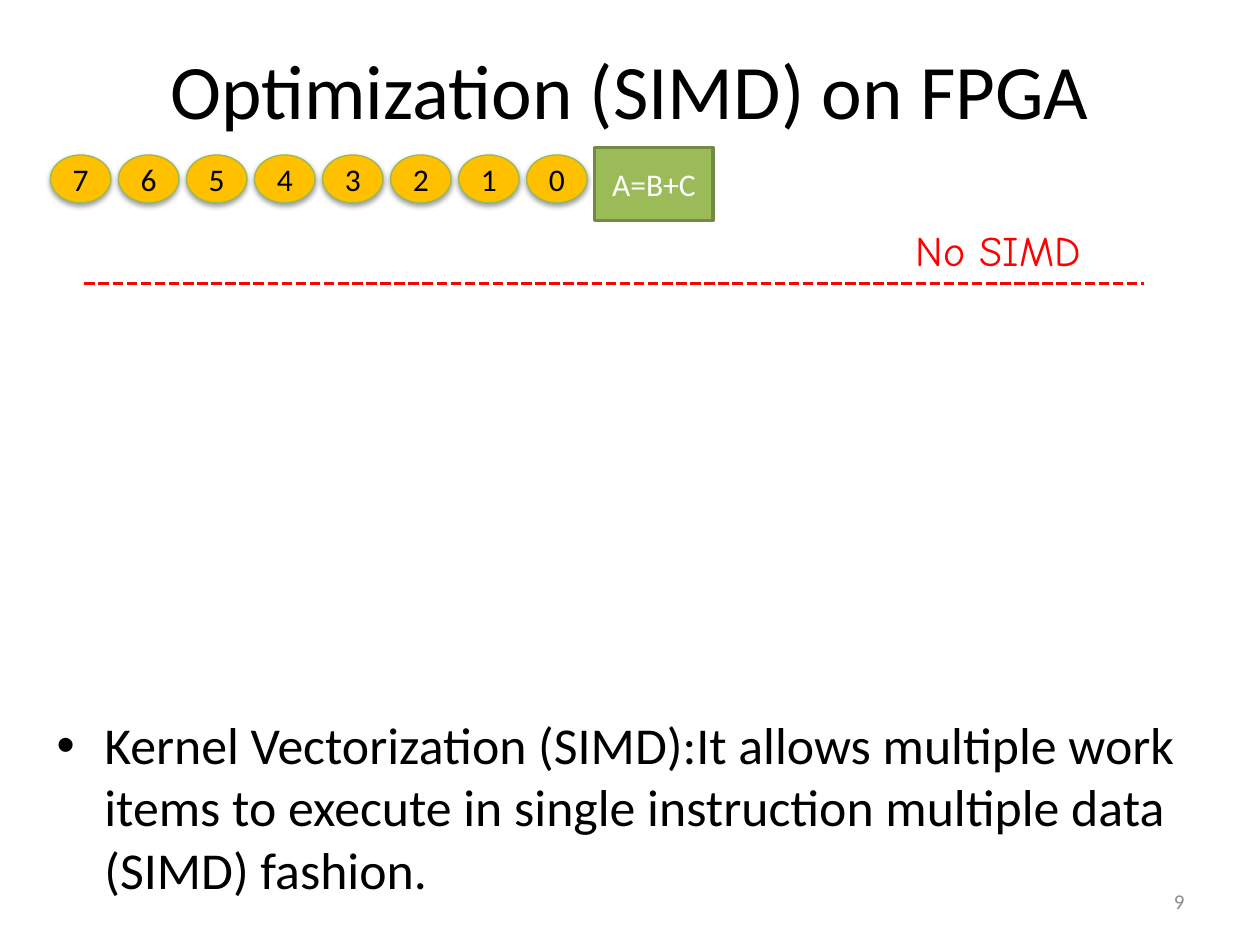
from lxml.etree import SubElement
from pptx import Presentation
from pptx.dml.color import RGBColor
from pptx.enum.dml import MSO_LINE
from pptx.enum.shapes import MSO_CONNECTOR, MSO_SHAPE
from pptx.enum.text import MSO_ANCHOR, PP_ALIGN
from pptx.oxml.ns import qn
from pptx.util import Inches, Pt

WIDTH, HEIGHT = 10, 7.5
BLACK, WHITE, RED, GREY = "000000", "FFFFFF", "FF0000", "8C8C8C"
GREEN, DARK_GREEN, LEAF, AMBER = "9BBB59", "738A42", "98B955", "FFC000"

# Row of work items: equal columns, counted down towards the operation
ITEM_COUNT = 8
ITEM_LEFT, ITEM_TOP, ITEM_PITCH = 0.4, 1.23, 0.54
ITEM_WIDTH, ITEM_HEIGHT = 0.48, 0.38


def color(value):
    return RGBColor.from_string(value)


def inches(*lengths):
    return [Inches(length) for length in lengths]


def write(box, text, size, fill, font="Calibri", align=PP_ALIGN.LEFT,
          anchor=MSO_ANCHOR.TOP, wrap=True):
    frame = box.text_frame
    frame.word_wrap = wrap
    frame.vertical_anchor = anchor
    para = frame.paragraphs[0]
    para.alignment = align
    span = para.add_run()
    span.text = text
    span.font.size = Pt(size)
    span.font.name = font
    span.font.color.rgb = color(fill)
    return para


def add_text(page, place, text, size, fill, **style):
    box = page.shapes.add_textbox(*inches(*place))
    return write(box, text, size, fill, **style)


def add_node(shapes, kind, place, text, fill, outline, weight, ink):
    node = shapes.add_shape(kind, *inches(*place))
    node.shadow.inherit = False
    node.fill.solid()
    node.fill.fore_color.rgb = color(fill)
    node.line.color.rgb = color(outline)
    node.line.width = Pt(weight)
    write(node, text, 18, ink, align=PP_ALIGN.CENTER,
          anchor=MSO_ANCHOR.MIDDLE, wrap=False)
    return node


def add_shadow(node):
    effects = node._element.spPr.find(qn("a:effectLst"))
    shadow = SubElement(effects, qn("a:outerShdw"), blurRad=str(Pt(3.1)),
                        dist=str(Pt(1.6)), dir="5400000", rotWithShape="0")
    tint = SubElement(shadow, qn("a:srgbClr"), val=BLACK)
    SubElement(tint, qn("a:alpha"), val="38000")


def add_work_items(page):
    group = page.shapes.add_group_shape()
    for number in range(ITEM_COUNT):
        left = ITEM_LEFT + (ITEM_COUNT - 1 - number) * ITEM_PITCH
        item = add_node(group.shapes, MSO_SHAPE.OVAL,
                        (left, ITEM_TOP, ITEM_WIDTH, ITEM_HEIGHT),
                        str(number), AMBER, LEAF, 0.75, BLACK)
        add_shadow(item)


def add_bullet(para, indent):
    properties = para._p.get_or_add_pPr()
    properties.set("marL", str(Inches(indent)))
    properties.set("indent", str(-Inches(indent)))
    SubElement(properties, qn("a:buFont"), typeface="Arial")
    SubElement(properties, qn("a:buChar"), char="•")


def add_divider(page, start, end, top):
    line = page.shapes.add_connector(MSO_CONNECTOR.STRAIGHT,
                                     *inches(start, top, end, top))
    line.line.color.rgb = color(RED)
    line.line.width = Pt(2)
    line.line.dash_style = MSO_LINE.SQUARE_DOT
    SubElement(line._element.spPr, qn("a:effectLst"))


def main():
    deck = Presentation()
    deck.slide_width, deck.slide_height = inches(WIDTH, HEIGHT)
    page = deck.slides.add_slide(deck.slide_layouts[6])

    # Title and page number
    add_text(page, (0.05 * WIDTH, 0.08, 0.9 * WIDTH, 1.25),
             "Optimization (SIMD) on FPGA", 44, BLACK,
             align=PP_ALIGN.CENTER, anchor=MSO_ANCHOR.MIDDLE)
    add_text(page, (7.17, 6.95, 2.33, 0.4), "9", 12, GREY,
             align=PP_ALIGN.RIGHT, anchor=MSO_ANCHOR.MIDDLE)

    # Work items queued before a single operation
    add_node(page.shapes, MSO_SHAPE.RECTANGLE, (4.72, 1.17, 0.94, 0.58),
             "A=B+C", GREEN, DARK_GREEN, 2, WHITE)
    add_work_items(page)

    # Explanation
    para = add_text(page, (0.35, 5.61, 9.25, 1.48),
                    "Kernel Vectorization (SIMD):It allows multiple work "
                    "items to execute in single instruction multiple data "
                    "(SIMD) fashion.", 29.6, BLACK)
    add_bullet(para, 0.38)

    # Divider and its label
    add_divider(page, 0.67, 9.08, 0.3 * HEIGHT)
    add_text(page, (7.17, 1.73, 2.25, 0.5), "No SIMD", 24, RED,
             font="Comic Neue")

    deck.save("out.pptx")


if __name__ == "__main__":
    main()
